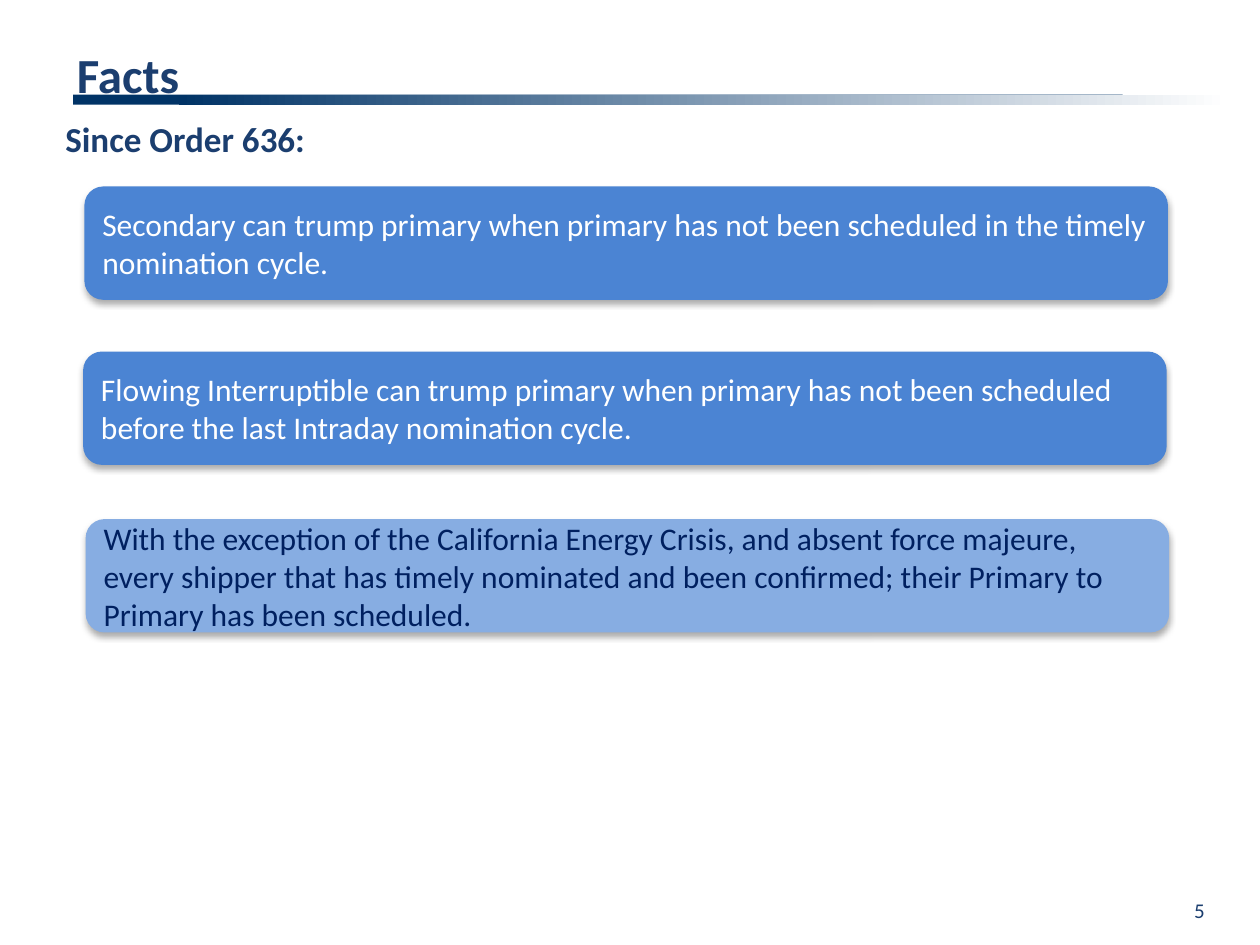
from lxml import etree
from pptx import Presentation
from pptx import util as u
from pptx.dml.color import RGBColor
from pptx.enum import shapes, text
from pptx.oxml import ns

NAVY = RGBColor(0x00, 0x33, 0x66)
WHITE = RGBColor(0xFF, 0xFF, 0xFF)
HEADING = RGBColor(0x1B, 0x3E, 0x6F)
BLUE = RGBColor(0x4B, 0x84, 0xD3)
PALE_BLUE = RGBColor(0x87, 0xAD, 0xE2)
DARK_BLUE = RGBColor(0x00, 0x20, 0x60)


def write(shape, wording, size, color, bold=False, align=text.PP_ALIGN.LEFT):
    frame = shape.text_frame
    frame.text = wording
    frame.word_wrap = True
    frame.auto_size = text.MSO_AUTO_SIZE.NONE
    frame.vertical_anchor = text.MSO_ANCHOR.MIDDLE
    paragraph = frame.paragraphs[0]
    paragraph.alignment = align
    font = paragraph.runs[0].font
    font.name, font.size, font.bold = "Calibri", u.Pt(size), bold
    font.color.rgb = color


def add_soft_shadow(shape):
    shape.shadow.inherit = False
    effects = shape.element.spPr.find(ns.qn("a:effectLst"))
    shadow = etree.SubElement(effects, ns.qn("a:outerShdw"), blurRad=str(u.Pt(3.5)),
                              dist=str(u.Pt(2.2)), dir="5400000", rotWithShape="0")
    black = etree.SubElement(shadow, ns.qn("a:srgbClr"), val="000000")
    etree.SubElement(black, ns.qn("a:alpha"), val="32000")


presentation = Presentation()
presentation.slide_width, presentation.slide_height = u.Inches(10), u.Inches(7.5)
slide = presentation.slides.add_slide(presentation.slide_layouts[5])

# Title over a rule that fades to white
title = slide.shapes.title
title.left, title.top = u.Inches(0.51), u.Inches(0.36)
title.width, title.height = u.Inches(7.17), u.Inches(0.45)
write(title, "Facts", 28, HEADING, bold=True)

for left, fades in [(0.58, False), (1.42, True)]:
    bar = slide.shapes.add_shape(shapes.MSO_SHAPE.RECTANGLE, u.Inches(left),
                                 u.Inches(0.75), u.Inches(8.33), u.Inches(0.08))
    bar.shadow.inherit = False
    bar.line.fill.background()
    if fades:
        bar.fill.gradient()
        bar.fill.gradient_angle = 0
        for stop, color in zip(bar.fill.gradient_stops, (NAVY, WHITE)):
            stop.color.rgb = color
    else:
        bar.fill.solid()
        bar.fill.fore_color.rgb = NAVY
    title.element.addprevious(bar.element)

subtitle = slide.shapes.add_textbox(u.Inches(0.42), u.Inches(0.88),
                                    u.Inches(2.12), u.Inches(0.44))
write(subtitle, "Since Order 636:", 20, HEADING, bold=True)
subtitle.text_frame.word_wrap = False

# Fact cards
facts = [
    (0.67, 1.48, BLUE, WHITE,
     "Secondary can trump primary when primary has not been scheduled in the timely "
     "nomination cycle."),
    (0.66, 2.79, BLUE, WHITE,
     "Flowing Interruptible can trump primary when primary has not been scheduled "
     "before the last Intraday nomination cycle."),
    (0.68, 4.12, PALE_BLUE, DARK_BLUE,
     "With the exception of the California Energy Crisis, and absent force majeure, "
     "every shipper that has timely nominated and been confirmed; their Primary to "
     "Primary has been scheduled."),
]
for left, top, fill, color, wording in facts:
    card = slide.shapes.add_shape(shapes.MSO_SHAPE.ROUNDED_RECTANGLE, u.Inches(left),
                                  u.Inches(top), u.Inches(8.6), u.Inches(0.9))
    card.fill.solid()
    card.fill.fore_color.rgb = fill
    card.line.fill.background()
    add_soft_shadow(card)
    write(card, wording, 18, color)

page_number = slide.shapes.add_textbox(u.Inches(7.33), u.Inches(6.96),
                                       u.Inches(2.33), u.Inches(0.52))
write(page_number, "5", 12, HEADING, align=text.PP_ALIGN.RIGHT)

presentation.save("out.pptx")
